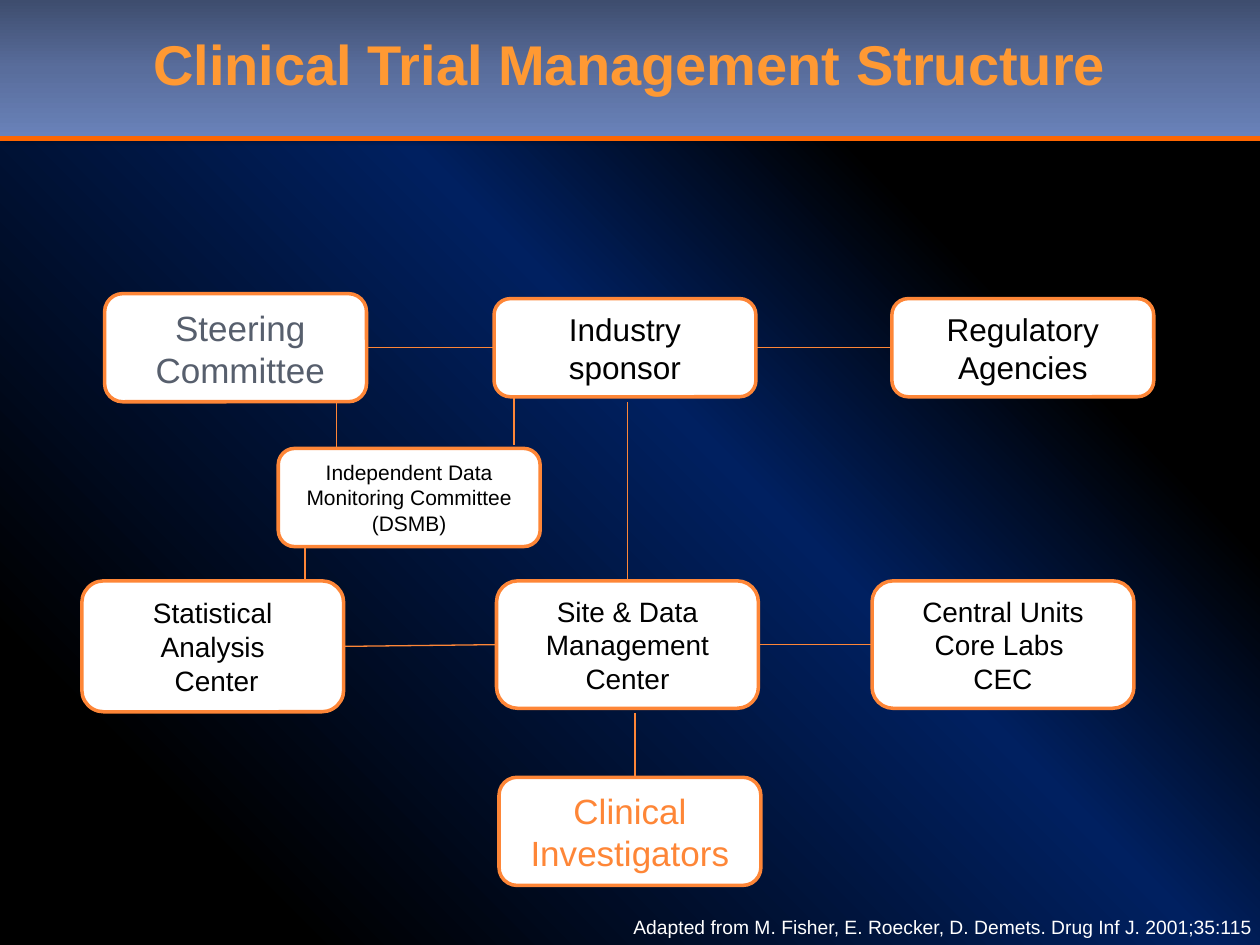
from copy import deepcopy

from lxml.etree import SubElement
from pptx import Presentation
from pptx.dml.color import RGBColor
from pptx.enum.shapes import MSO_CONNECTOR, MSO_SHAPE
from pptx.enum.text import MSO_ANCHOR, PP_ALIGN
from pptx.oxml import parse_xml
from pptx.oxml.ns import nsdecls, qn
from pptx.util import Cm, Pt

# Content
TITLE = "Clinical Trial Management Structure"
SOURCE = "Adapted from M. Fisher, E. Roecker, D. Demets. Drug Inf J. 2001;35:115"
ORANGE, BLACK, WHITE, SLATE = "FE8637", "000000", "FFFFFF", "575F6D"

# name: (left, top, height in cm, font size, colour, paragraphs)
BOXES = {
    "steering": (2.11, 5.92, 2.18, 20, SLATE, []),
    "sponsor": (9.96, 6.02, 1.98, 18, BLACK, ["Industry sponsor"]),
    "agencies": (17.98, 6.02, 1.98, 18, BLACK, ["Regulatory Agencies"]),
    "monitoring": (5.61, 9.04, 1.98, 12, BLACK,
                   ["Independent Data Monitoring Committee (DSMB)"]),
    "statistics": (1.65, 11.71, 2.64, 16, BLACK, ["Statistical Analysis", " Center"]),
    "site": (10.01, 11.71, 2.57, 16, BLACK, ["Site & Data Management Center"]),
    "central": (17.58, 11.71, 2.57, 16, BLACK, ["Central Units Core Labs ", "CEC"]),
    "investigators": (10.06, 15.67, 2.18, 20, ORANGE, ["Clinical Investigators"]),
}
SIDE_LINKS = [("steering", "sponsor"), ("sponsor", "agencies"),
              ("statistics", "site"), ("site", "central")]
# x, top, bottom in cm
DROPS = [(6.78, 8.1, 9.04), (10.36, 8.03, 8.97), (12.65, 8.1, 11.71), (12.8, 14.38, 15.7)]
BOX_WIDTH, HEADER_HEIGHT = 5.28, 2.77
RIGHT_SIDE, LEFT_SIDE = 3, 1


def rgb(value):
    return RGBColor.from_string(value)


def set_gradient(fill, stops, angle):
    fill.gradient()
    fill.gradient_angle = angle
    stop_list = fill.gradient_stops[0]._gs.getparent()
    while len(stop_list) < len(stops):
        stop_list.append(deepcopy(stop_list[0]))
    for stop, (position, colour) in zip(fill.gradient_stops, stops):
        stop.position = position
        stop.color.rgb = rgb(colour)


def add_text(shape, paragraphs, size, colour, align=PP_ALIGN.CENTER, wrap=True):
    frame = shape.text_frame
    frame.word_wrap = wrap
    frame.vertical_anchor = MSO_ANCHOR.MIDDLE
    for index, text in enumerate(paragraphs):
        para = frame.add_paragraph() if index else frame.paragraphs[0]
        para.alignment = align
        span = para.add_run()
        span.text = text
        span.font.name = "Arial"
        span.font.size = Pt(size)
        span.font.color.rgb = rgb(colour)
    return frame


def add_line(page, x1, y1, x2, y2, colour=ORANGE, width=0.75):
    line = page.shapes.add_connector(
        MSO_CONNECTOR.STRAIGHT, Cm(x1), Cm(y1), Cm(x2), Cm(y2))
    line.line.color.rgb = rgb(colour)
    line.line.width = Pt(width)
    SubElement(line._element.spPr, qn("a:effectLst"))
    return line


def shadow(blur, distance, alpha, angle):
    return parse_xml(
        f'<a:effectLst {nsdecls("a")}><a:outerShdw blurRad="{Pt(blur)}" '
        f'dist="{Pt(distance)}" dir="{angle * 60000}"><a:srgbClr val="{BLACK}">'
        f'<a:alpha val="{alpha * 1000}"/></a:srgbClr></a:outerShdw></a:effectLst>')


deck = Presentation()
deck.slide_width, deck.slide_height = Cm(25.4), Cm(19.05)
page = deck.slides.add_slide(deck.slide_layouts[6])
set_gradient(page.background.fill,
             [(0.14, BLACK), (0.55, "002060"), (0.75, BLACK)], 45)

# Header band with its rule
header = page.shapes.add_shape(
    MSO_SHAPE.RECTANGLE, 0, 0, deck.slide_width, Cm(HEADER_HEIGHT))
set_gradient(header.fill, [(0, "3E4D6E"), (0.5, "596D9C"), (1, "6982B9")], 270)
header.line.fill.background()
header._element.spPr.append(shadow(3.1, 1.8, 35, 90))
add_line(page, 0, 2.79, 25.4, 2.79, "FF6600", 3)

# Link that runs behind the statistics box
add_line(page, 6.15, 11.05, 6.15, 11.99)

# Title
title = page.shapes.add_textbox(0, 0, deck.slide_width, Cm(HEADER_HEIGHT))
title_para = add_text(title, [TITLE], 32, "FF9933").paragraphs[0]
title_para.line_spacing = 0.85
title_font = title_para.runs[0].font
title_font.bold = True
title_font.fill._xPr.find(qn("a:solidFill")).addnext(shadow(0, 3, 100, 45))

# Organisation boxes
shapes = {}
for name, (left, top, height, size, colour, paragraphs) in BOXES.items():
    box = page.shapes.add_shape(
        MSO_SHAPE.ROUNDED_RECTANGLE, Cm(left), Cm(top), Cm(BOX_WIDTH), Cm(height))
    box.shadow.inherit = False
    box.fill.solid()
    box.fill.fore_color.rgb = rgb(WHITE)
    box.line.color.rgb = rgb(ORANGE)
    box.line.width = Pt(2)
    add_text(box, paragraphs, size, colour)
    shapes[name] = box

# The steering label sits slightly right of its box centre
label = page.shapes.add_textbox(Cm(2.62), Cm(6.05), Cm(4.45), Cm(1.96))
add_text(label, ["Steering Committee"], 20, SLATE)

# Links between boxes
for start, end in SIDE_LINKS:
    link = add_line(page, 0, 0, 1, 1)
    link.begin_connect(shapes[start], RIGHT_SIDE)
    link.end_connect(shapes[end], LEFT_SIDE)
for x, top, bottom in DROPS:
    add_line(page, x, top, x, bottom)

# Source line
source = page.shapes.add_textbox(Cm(12.52), Cm(18.31), Cm(13.11), Cm(0.74))
add_text(source, [SOURCE], 11, WHITE, PP_ALIGN.LEFT, wrap=False)

deck.save("out.pptx")
